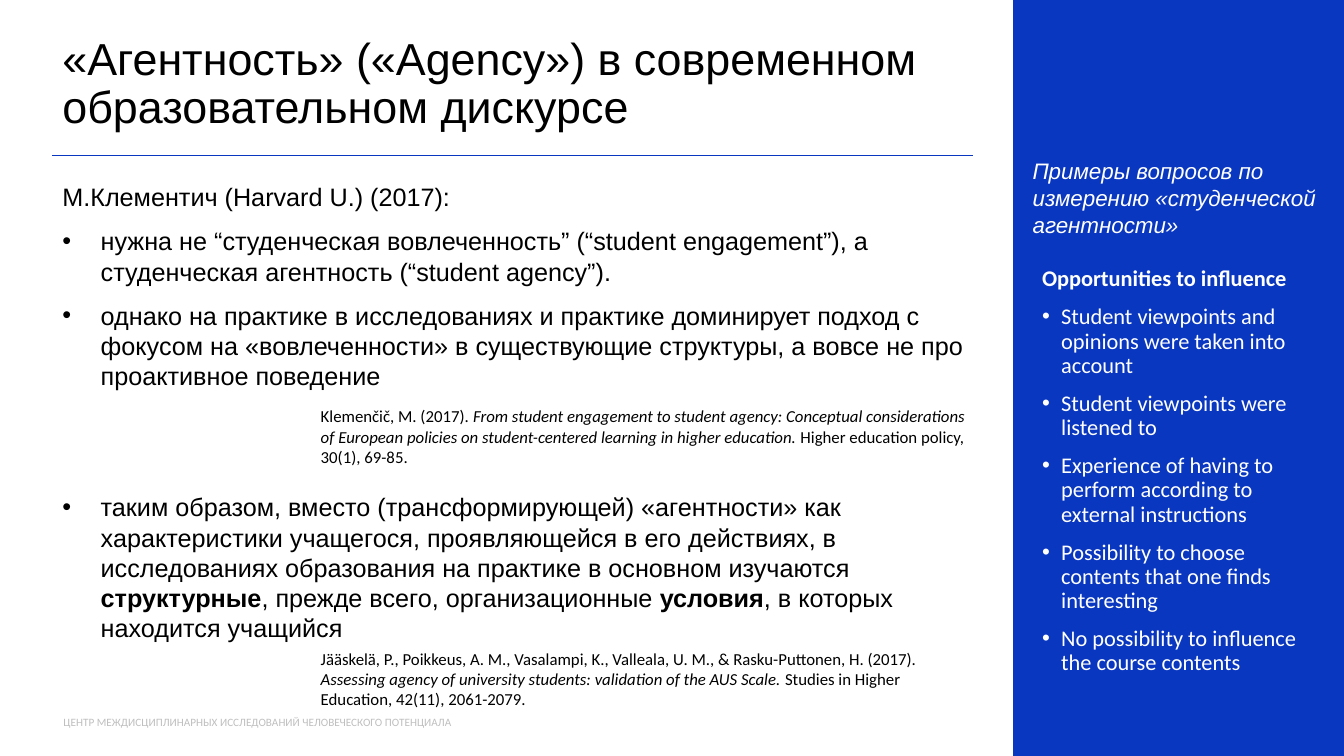
from lxml import etree
from pptx import Presentation
from pptx import util as u
from pptx.dml.color import RGBColor
from pptx.enum import shapes, text
from pptx.oxml.ns import qn

BLUE = RGBColor(0x0A, 0x37, 0xBF)
BLACK = RGBColor(0, 0, 0)
WHITE = RGBColor(0xFF, 0xFF, 0xFF)
GREY = RGBColor(0xBF, 0xBF, 0xBF)

COLUMNS, ROWS = 128, 72
LEFT = 5
MAIN_WIDTH = 87.7
PANEL_LEFT = 96.5
CITE_LEFT, CITE_HEIGHT = 29.6, 6.8
PARAGRAPH_GAP = 10
CITATION_GAP = 72  # room for the first citation between two bullets

THESES = [
    "нужна не “студенческая вовлеченность” (“student engagement”), "
    "а студенческая агентность (“student agency”).",
    "однако на практике в исследованиях и практике доминирует подход с фокусом "
    "на «вовлеченности» в существующие структуры, а вовсе не про проактивное поведение",
    [("таким образом, вместо (трансформирующей) «агентности» как характеристики "
      "учащегося, проявляющейся в его действиях, в исследованиях образования "
      "на практике в основном изучаются", ""),
     (" структурные", "b"),
     (", прежде всего, организационные ", ""),
     ("условия", "b"),
     (", в которых находится учащийся", "")],
]

QUESTIONS = [
    "Student viewpoints and opinions were taken into account",
    "Student viewpoints were listened to",
    "Experience of having to perform according to external instructions",
    "Possibility to choose contents that one finds interesting",
    "No possibility to influence the course contents",
]

# top row, width in columns, runs
CITATIONS = [
    (61.3, 60.4, [
        ("Jääskelä, P., Poikkeus, A. M., Vasalampi, K., Valleala, U. M., "
         "& Rasku-Puttonen, H. (2017). ", ""),
        ("Assessing agency of university students: validation of the AUS Scale. ", "i"),
        ("Studies in Higher Education, 42(11), 2061-2079.", "")]),
    (38.2, 64, [
        ("Klemenčič, M. (2017). ", ""),
        ("From student engagement to student agency: Conceptual considerations of "
         "European policies on student-centered learning in higher education. ", "i"),
        ("Higher education policy, 30(1), 69-85.", "")]),
]


class Deck:
    def __init__(self):
        self.prs = Presentation()
        self.prs.slide_width, self.prs.slide_height = u.Inches(13.33), u.Inches(7.5)
        self.s = self.prs.slides.add_slide(self.prs.slide_layouts[6])

    def x(self, columns):
        return round(self.prs.slide_width * columns / COLUMNS)

    def y(self, rows):
        return round(self.prs.slide_height * rows / ROWS)

    def panel(self, left, top, width, height, color):
        sp = self.s.shapes.add_shape(
            shapes.MSO_SHAPE.RECTANGLE,
            self.x(left), self.y(top), self.x(width), self.y(height))
        sp.shadow.inherit = False
        sp.fill.solid()
        sp.fill.fore_color.rgb = color
        sp.line.fill.background()

    def rule(self, left, top, width, color):
        line = self.s.shapes.add_connector(
            shapes.MSO_CONNECTOR.STRAIGHT,
            self.x(left), self.y(top), self.x(left + width), self.y(top))
        line.line.color.rgb = color
        line.line.width = u.Pt(1)
        etree.SubElement(line._element.spPr, qn("a:effectLst"))

    def box(self, left, top, width, height, middle=False):
        sp = self.s.shapes.add_textbox(
            self.x(left), self.y(top), self.x(width), self.y(height))
        tf = sp.text_frame
        tf.word_wrap = True
        if middle:
            tf.vertical_anchor = text.MSO_ANCHOR.MIDDLE
        return tf

    def paragraph(self, tf, content, size, font, color, style="",
                  before=0, spacing=1.0, hang=0):
        """Add text or (text, style) runs; hang is the bullet indent in inches."""
        first = tf.paragraphs[0]
        p = tf.add_paragraph() if first.runs else first
        p.space_before = u.Pt(before)
        p.line_spacing = spacing
        runs = [(content, style)] if isinstance(content, str) else content
        for words, run_style in runs:
            r = p.add_run()
            r.text = words
            r.font.size, r.font.name = u.Pt(size), font
            r.font.color.rgb = color
            r.font.bold = "b" in run_style
            r.font.italic = "i" in run_style
        if hang:
            pPr = p._p.get_or_add_pPr()
            pPr.set("marL", str(u.Inches(hang)))
            pPr.set("indent", str(-u.Inches(hang)))
            etree.SubElement(pPr, qn("a:buFont"), typeface="Arial")
            etree.SubElement(pPr, qn("a:buChar"), char="•")


def main():
    deck = Deck()
    deck.panel(PANEL_LEFT, 0, COLUMNS - PANEL_LEFT, ROWS, BLUE)
    deck.rule(LEFT, 14.8, MAIN_WIDTH, BLUE)

    footer = deck.box(5.1, 66.9, 58.9, 3.8, middle=True)
    deck.paragraph(footer, "ЦЕНТР МЕЖДИСЦИПЛИНАРНЫХ ИССЛЕДОВАНИЙ ЧЕЛОВЕЧЕСКОГО ПОТЕНЦИАЛА",
                   8, "Calibri", GREY)

    title = deck.box(LEFT, 3.5, MAIN_WIDTH, 9.2, middle=True)
    deck.paragraph(title, "«Агентность» («Agency») в современном образовательном дискурсе",
                   32, "Arial", BLACK, spacing=0.9)

    body = deck.box(LEFT, 16.8, MAIN_WIDTH, 46.4)
    deck.paragraph(body, "М.Клементич (Harvard U.) (2017):", 18, "Arial", BLACK,
                   before=PARAGRAPH_GAP)
    for thesis in THESES:
        gap = CITATION_GAP if thesis is THESES[-1] else PARAGRAPH_GAP
        deck.paragraph(body, thesis, 18, "Arial", BLACK, before=gap, hang=0.38)

    questions = deck.box(98.3, 25, 27.8, 39.7)
    deck.paragraph(questions, "Opportunities to influence", 16, "Calibri", WHITE, "b",
                   before=PARAGRAPH_GAP, spacing=0.9)
    for question in QUESTIONS:
        deck.paragraph(questions, question, 16, "Calibri", WHITE,
                       before=PARAGRAPH_GAP, spacing=0.9, hang=0.19)

    heading = deck.box(97.4, 14.5, 29.7, 8.7)
    deck.paragraph(heading, "Примеры вопросов по измерению «студенческой агентности»",
                   16, "Arial", WHITE, "i")

    for top, width, runs in CITATIONS:
        cite = deck.box(CITE_LEFT, top, width, CITE_HEIGHT)
        deck.paragraph(cite, runs, 12, "Calibri", BLACK)

    deck.prs.save("out.pptx")


if __name__ == "__main__":
    main()
